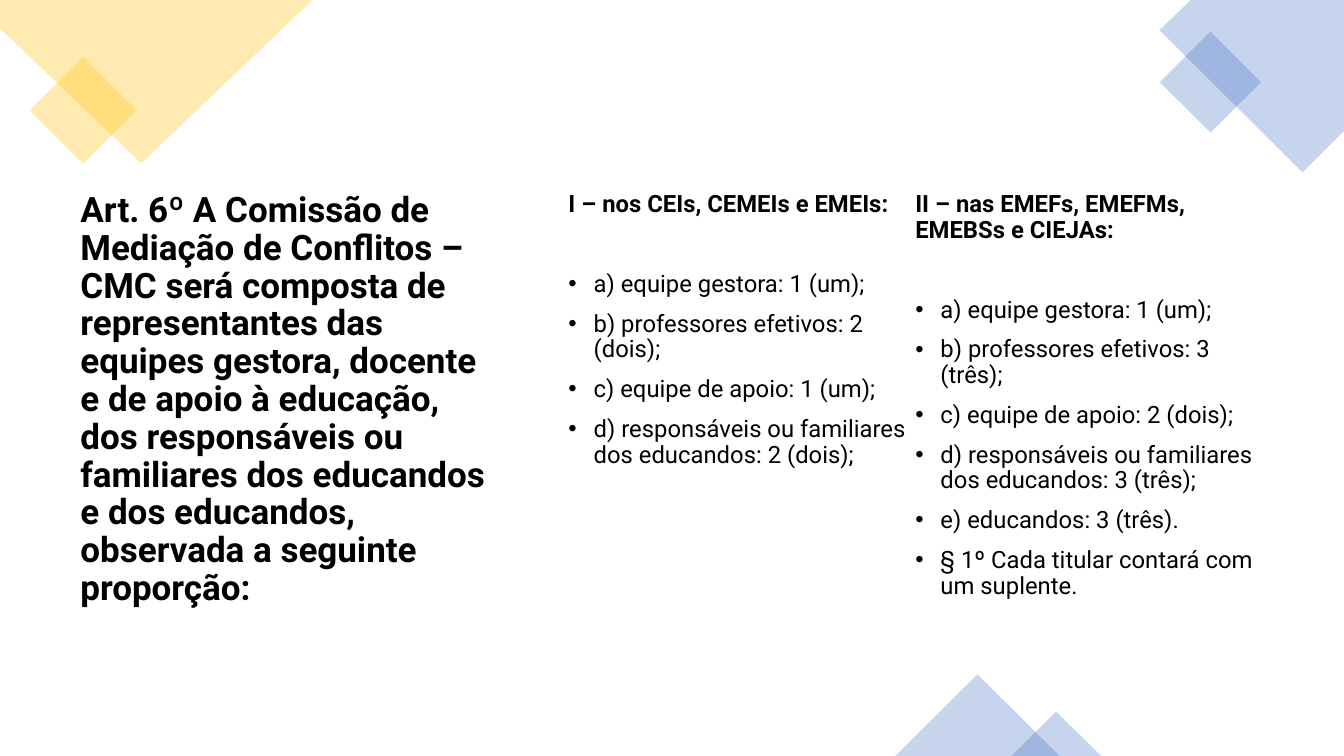
"""Build a slide on the make-up of the conflict mediation committee."""
from lxml import etree
from pptx import Presentation
from pptx import util as u
from pptx.dml.color import RGBColor
from pptx.enum import shapes, text
from pptx.oxml.ns import qn

COLORS = {"gold": "FFC000", "blue": "4472C4", "ink": "000000"}

deck = Presentation()
deck.slide_width, deck.slide_height = u.Inches(13.33), u.Inches(7.5)
slide = deck.slides.add_slide(deck.slide_layouts[6])


def tint(shape, color):
    shape.shadow.inherit = False
    shape.line.fill.background()
    shape.fill.solid()
    shape.fill.fore_color.rgb = RGBColor.from_string(COLORS[color])
    tone = shape.fill._xPr.find(qn("a:solidFill"))[0]
    etree.SubElement(tone, qn("a:alpha"), val="30000")


def write(left, width, lines):
    box = slide.shapes.add_textbox(
        u.Inches(left), u.Inches(1.86), u.Inches(width), u.Inches(4.94))
    frame = box.text_frame
    frame.word_wrap = True
    frame.vertical_anchor = text.MSO_ANCHOR.TOP
    for i, (words, size, bold, space) in enumerate(lines):
        para = frame.paragraphs[0] if i == 0 else frame.add_paragraph()
        para.line_spacing = 0.9
        para.space_before = u.Pt(space)
        if not bold:
            props = para._p.get_or_add_pPr()
            props.set("marL", str(u.Inches(0.25)))
            props.set("indent", str(u.Inches(-0.25)))
            etree.SubElement(props, qn("a:buFont"), typeface="Arial")
            etree.SubElement(props, qn("a:buChar"), char="•")
        run = para.add_run()
        run.text = words
        run.font.name = "Roboto"
        run.font.size = u.Pt(size)
        run.font.bold = bold
        run.font.color.rgb = RGBColor.from_string(COLORS["ink"])


corners = [
    ("gold", [(0, 0), (3.1, 0), (1.4, 1.62), (0, 0.28)]),
    ("blue", [(11.81, 0), (13.33, 0), (13.33, 1.3), (12.92, 1.71), (11.5, 0.3)]),
]
for color, points in corners:
    spots = [(u.Inches(x), u.Inches(y)) for x, y in points]
    path = slide.shapes.build_freeform(*spots[0])
    path.add_line_segments(spots[1:], close=True)
    tint(path.convert_to_shape(), color)

kinds = shapes.MSO_SHAPE
accents = [
    (kinds.RECTANGLE, 45, "gold", (0.45, 0.72, 0.75, 0.75)),
    (kinds.RECTANGLE, 45, "blue", (11.65, 0.46, 0.71, 0.71)),
    (kinds.ISOSCELES_TRIANGLE, 0, "blue", (8.88, 6.69, 1.63, 0.81)),
    (kinds.ISOSCELES_TRIANGLE, 0, "blue", (10.03, 7.06, 0.89, 0.44)),
]
for kind, turn, color, place in accents:
    accent = slide.shapes.add_shape(kind, *[u.Inches(n) for n in place])
    accent.rotation = turn
    tint(accent, color)

title = (
    "Art. 6º A Comissão de Mediação de Conflitos – CMC será composta de "
    "representantes das equipes gestora, docente e de apoio à educação, "
    "dos responsáveis ou familiares dos educandos e dos educandos, "
    "observada a seguinte proporção:"
)
write(0.7, 4.33, [(title, 25, True, 0)])

groups = [
    ("I – nos CEIs, CEMEIs e EMEIs:", [
        "a) equipe gestora: 1 (um);",
        "b) professores efetivos: 2 (dois);",
        "c) equipe de apoio: 1 (um);",
        "d) responsáveis ou familiares dos educandos: 2 (dois);",
    ]),
    ("II – nas EMEFs, EMEFMs, EMEBSs e CIEJAs:", [
        "a) equipe gestora: 1 (um);",
        "b) professores efetivos: 3 (três);",
        "c) equipe de apoio: 2 (dois);",
        "d) responsáveis ou familiares dos educandos: 3 (três);",
        "e) educandos: 3 (três).",
        "§ 1º Cada titular contará com um suplente.",
    ]),
]
for col, (head, items) in enumerate(groups):
    lines = [(head, 17, True, 0)]
    for row, item in enumerate(items):
        lines.append((item, 17, False, 10 if row else 38.5))
    write(5.54 + 3.44 * col, 3.64, lines)

deck.save("out.pptx")
